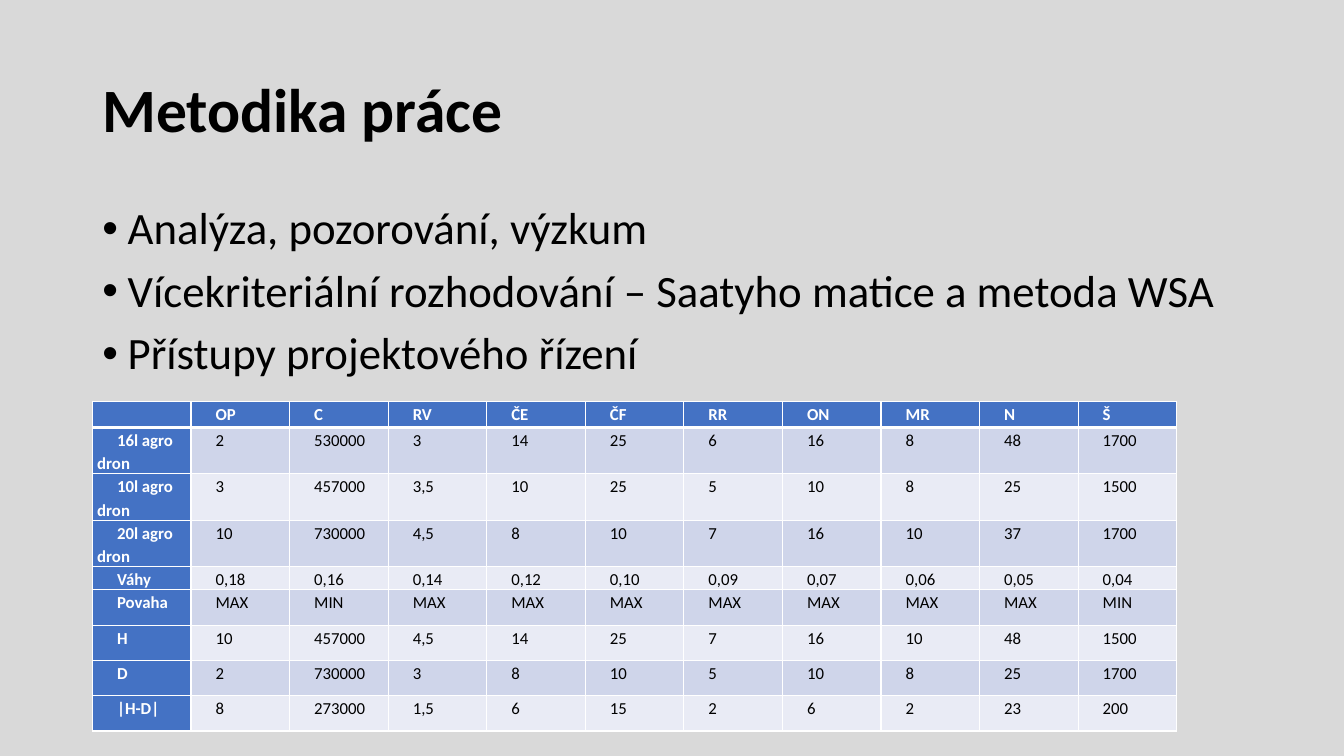
from lxml.etree import SubElement
from pptx import Presentation
from pptx.dml.color import RGBColor
from pptx.enum.text import MSO_ANCHOR
from pptx.oxml.ns import qn
from pptx.util import Cm, Pt

FONT = "Calibri"
BLACK = "000000"
WHITE = "FFFFFF"
HEADER_BLUE = "4472C4"
BANDS = ("CFD5EA", "E9EBF5")
BACKGROUND = "D9D9D9"

BULLETS = [
    "Analýza, pozorování, výzkum",
    "Vícekriteriální rozhodování – Saatyho matice a metoda WSA",
    "Přístupy projektového řízení",
]

CRITERIA = [
    ["", "OP", "C", "RV", "ČE", "ČF", "RR", "ON", "MR", "N", "Š"],
    ["16l agro dron", "2", "530000", "3", "14", "25", "6", "16", "8", "48", "1700"],
    ["10l agro dron", "3", "457000", "3,5", "10", "25", "5", "10", "8", "25", "1500"],
    ["20l agro dron", "10", "730000", "4,5", "8", "10", "7", "16", "10", "37", "1700"],
    ["Váhy", "0,18", "0,16", "0,14", "0,12", "0,10", "0,09", "0,07", "0,06", "0,05", "0,04"],
    ["Povaha", "MAX", "MIN", "MAX", "MAX", "MAX", "MAX", "MAX", "MAX", "MAX", "MIN"],
    ["H", "10", "457000", "4,5", "14", "25", "7", "16", "10", "48", "1500"],
    ["D", "2", "730000", "3", "8", "10", "5", "10", "8", "25", "1700"],
    ["|H-D|", "8", "273000", "1,5", "6", "15", "2", "6", "2", "23", "200"],
]
ROW_HEIGHTS = [0.66, 0.89, 0.89, 0.89, 0.58, 0.89, 0.89, 0.89, 0.89]


def color(value):
    return RGBColor.from_string(value)


def format_runs(para, size, ink, bold=False):
    for span in para.runs:
        span.font.name = FONT
        span.font.size = Pt(size)
        span.font.bold = bold
        span.font.color.rgb = color(ink)


def set_indent(para, margin, first_line):
    properties = para._p.get_or_add_pPr()
    properties.set("marL", str(Cm(margin)))
    properties.set("indent", str(Cm(first_line)))
    return properties


def add_text_box(page, left, top, width, height, anchor):
    box = page.shapes.add_textbox(Cm(left), Cm(top), Cm(width), Cm(height))
    box.text_frame.word_wrap = True
    box.text_frame.vertical_anchor = anchor
    return box.text_frame


def add_title(page, text):
    frame = add_text_box(page, 2.33, 1, 29.21, 3.68, MSO_ANCHOR.MIDDLE)
    frame.text = text
    para = frame.paragraphs[0]
    para.line_spacing = 0.9
    format_runs(para, 44, BLACK, bold=True)


def add_bullets(page, lines):
    frame = add_text_box(page, 2.33, 5.07, 29.21, 12.09, MSO_ANCHOR.TOP)
    frame.text = "\n".join(lines)
    for index, para in enumerate(frame.paragraphs):
        properties = set_indent(para, 0.64, -0.64)
        SubElement(properties, qn("a:buFont"), typeface="Arial")
        SubElement(properties, qn("a:buChar"), char="•")
        para.line_spacing = 0.9
        para.space_before = Pt(10 if index else 0)
        format_runs(para, 32, BLACK)


def set_border(cell, side, width):
    line = SubElement(cell._tc.get_or_add_tcPr(), qn(f"a:{side}"), w=str(Pt(width)))
    fill = SubElement(line, qn("a:solidFill"))
    SubElement(fill, qn("a:srgbClr"), val=WHITE)


def format_cell(cell, text, row, column):
    is_heading = row == 0 or column == 0
    for side in ("lnL", "lnR", "lnT", "lnB"):
        under_header = (row, side) in ((0, "lnB"), (1, "lnT"))
        set_border(cell, side, 3 if under_header else 1)
    cell.fill.solid()
    cell.fill.fore_color.rgb = color(HEADER_BLUE if is_heading else BANDS[(row - 1) % 2])
    cell.margin_left = cell.margin_right = Cm(0.12)
    cell.margin_top = cell.margin_bottom = 0
    cell.text_frame.text = text
    para = cell.text_frame.paragraphs[0]
    set_indent(para, 0, 0.5)
    para.line_spacing = 1.15
    para.space_after = Pt(10)
    format_runs(para, 12, WHITE if is_heading else BLACK, is_heading)
    if not text:
        SubElement(para._p, qn("a:endParaRPr"), sz="1200")


def add_criteria_table(page, rows, heights):
    frame = page.shapes.add_table(
        len(rows), len(rows[0]), Cm(2.33), Cm(10.11), Cm(27.33), Cm(sum(heights))
    )
    table = frame.table
    for row, (texts, height) in enumerate(zip(rows, heights)):
        table.rows[row].height = Cm(height)
        for column, text in enumerate(texts):
            format_cell(table.cell(row, column), text, row, column)


def main():
    deck = Presentation()
    deck.slide_width = Cm(33.87)
    deck.slide_height = Cm(19.05)
    page = deck.slides.add_slide(deck.slide_layouts[6])
    page.background.fill.solid()
    page.background.fill.fore_color.rgb = color(BACKGROUND)
    add_title(page, "Metodika práce")
    add_bullets(page, BULLETS)
    add_criteria_table(page, CRITERIA, ROW_HEIGHTS)
    deck.save("out.pptx")


if __name__ == "__main__":
    main()
